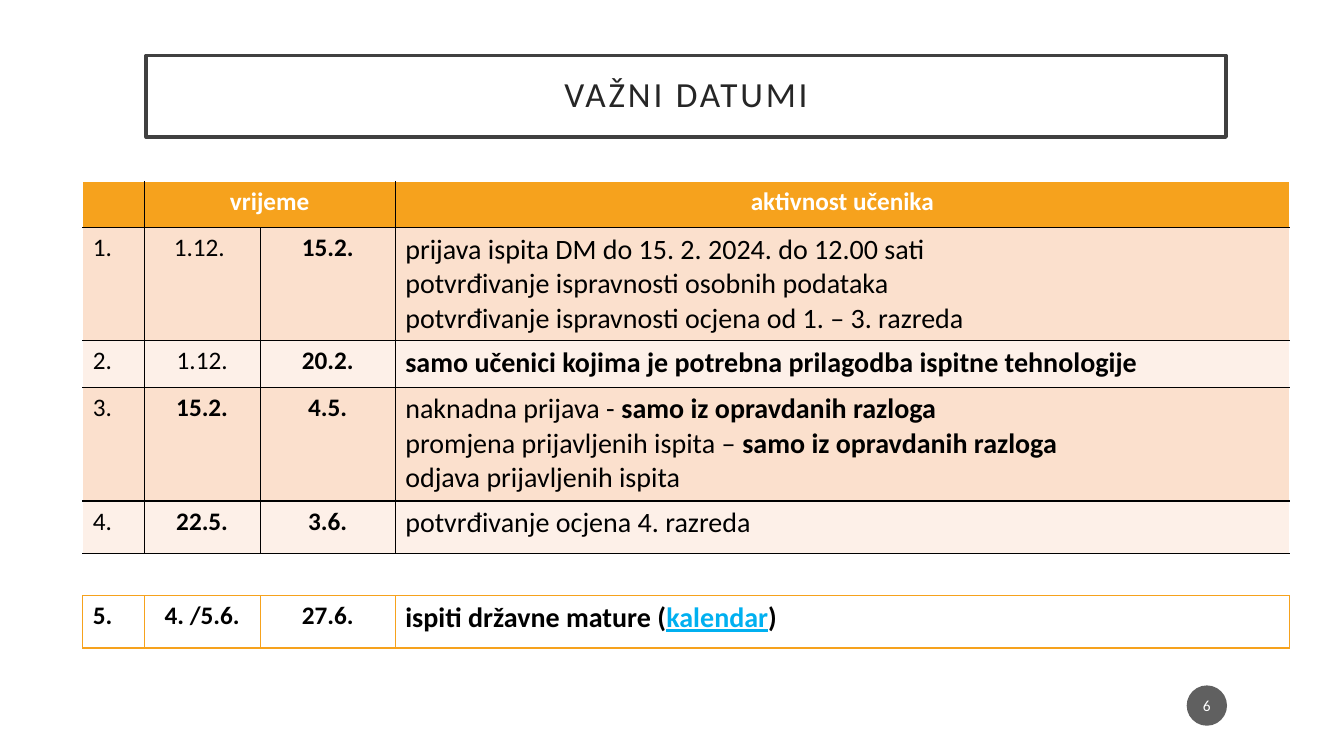
from lxml.etree import SubElement
from pptx import Presentation
from pptx.dml.color import RGBColor
from pptx.enum.shapes import MSO_SHAPE
from pptx.enum.text import MSO_ANCHOR, PP_ALIGN
from pptx.oxml import parse_xml
from pptx.oxml.ns import nsdecls, qn
from pptx.util import Inches, Pt

COLORS = {
    "white": "FFFFFF", "black": "000000", "title": "262626", "frame": "404040",
    "orange": "F6A21D", "peach": "FBE0CD", "cream": "FDF0E8",
    "link": "00B0F0", "badge": "1D1D1D",
}
FONT = "Calibri"
LEFT, WIDTH = 0.82, 11.98
COLUMNS = [0.61, 1.15, 1.34, 8.87]


def rgb(name):
    return RGBColor.from_string(COLORS[name])


def add_text(p, text, size=18, color="black", bold=False, underline=False, spacing=0):
    r = p.add_run()
    r.text = text
    r.font.name = FONT
    r.font.size = Pt(size)
    r.font.bold = bold
    r.font.underline = underline
    r.font.color.rgb = rgb(color)
    if spacing:
        r.font._element.set("spc", str(spacing * 100))


class SlideBuilder:
    def __init__(self, prs):
        self.s = prs.slides.add_slide(prs.slide_layouts[6])

    def shape(self, kind, box, text, fill, line=None, inset=(0.1, 0.05), alpha=None,
              line_spacing=None, **fmt):
        sp = self.s.shapes.add_shape(kind, *(Inches(v) for v in box))
        sp.shadow.inherit = False
        sp.fill.solid()
        sp.fill.fore_color.rgb = rgb(fill)
        if alpha:
            color = sp._element.spPr.find(qn("a:solidFill"))[0]
            SubElement(color, qn("a:alpha"), val=str(alpha * 1000))
        if line:
            sp.line.color.rgb = rgb(line)
            sp.line.width = Pt(2.5)
        else:
            sp.line.fill.background()
        tf = sp.text_frame
        tf.word_wrap = True
        tf.vertical_anchor = MSO_ANCHOR.MIDDLE
        tf.margin_left = tf.margin_right = Inches(inset[0])
        tf.margin_top = tf.margin_bottom = Inches(inset[1])
        p = tf.paragraphs[0]
        p.alignment = PP_ALIGN.CENTER
        p.line_spacing = line_spacing
        add_text(p, text, **fmt)

    def table(self, top, heights):
        frame = self.s.shapes.add_table(
            len(heights), len(COLUMNS), Inches(LEFT), Inches(top),
            Inches(WIDTH), Inches(sum(heights)))
        table = frame.table
        table.first_row = table.horz_banding = False
        for column, width in zip(table.columns, COLUMNS):
            column.width = Inches(width)
        for row, height in zip(table.rows, heights):
            row.height = Inches(height)
        return table

    def cell(self, cell, paragraphs, fill, borders, center=False):
        if fill:
            cell.fill.solid()
            cell.fill.fore_color.rgb = rgb(fill)
        else:
            cell.fill.background()
        for i, (side, (color, width)) in enumerate(zip("LRTB", borders)):
            cell._tc.get_or_add_tcPr().insert(i, parse_xml(
                f'<a:ln{side} {nsdecls("a")} w="{Pt(width)}"><a:solidFill>'
                f'<a:srgbClr val="{COLORS[color]}"/></a:solidFill></a:ln{side}>'))
        tf = cell.text_frame
        for i, runs in enumerate(paragraphs):
            p = tf.paragraphs[0] if i == 0 else tf.add_paragraph()
            p.alignment = PP_ALIGN.CENTER if center else PP_ALIGN.LEFT
            for text, fmt in runs:
                add_text(p, text, **fmt)


def run(text, **fmt):
    return text, fmt


def plain(text):
    return run(text, size=20)


def strong(text):
    return run(text, size=20, bold=True)


def heading(text):
    return [[run(text, color="white", bold=True)]] if text else []


# Each row: number, start, end, activity paragraphs
ACTIVITIES = [
    (run("1."), run("1.12. "), run("15.2.", bold=True), [
        [plain("prijava ispita DM do 15. 2. 2024. do 12.00 sati")],
        [plain("potvrđivanje ispravnosti osobnih podataka")],
        [plain("potvrđivanje ispravnosti ocjena od 1. – 3. razreda")]]),
    (run("2."), run("1.12."), run("20.2.", bold=True), [
        [strong("samo učenici kojima je potrebna prilagodba ispitne tehnologije")]]),
    (run("3."), run("15.2.", bold=True), run("4.5.", bold=True), [
        [plain("naknadna prijava - "), strong("samo iz opravdanih razloga")],
        [plain("promjena prijavljenih ispita – "), strong("samo iz opravdanih razloga")],
        [plain("odjava prijavljenih ispita")]]),
    (run("4."), run("22.5.", bold=True), run("3.6.", bold=True), [
        [plain("potvrđivanje ocjena 4. razreda")]]),
]
EXAMS = (run("5.", bold=True), run("4. /5.6.", bold=True), run("27.6.", bold=True), [
    [strong("ispiti državne mature ("),
     run("kalendar", size=20, color="link", bold=True, underline=True),
     strong(")")]])


def row_content(row):
    return [[[item]] for item in row[:3]] + [row[3]]


def main():
    prs = Presentation()
    prs.slide_width, prs.slide_height = Inches(13.33), Inches(7.5)
    slide = SlideBuilder(prs)

    # Title
    slide.shape(MSO_SHAPE.RECTANGLE, (1.45, 0.55, 10.71, 0.81), "VAŽNI DATUMI", "white",
                line="frame", inset=(0.2, 0.2), line_spacing=0.9,
                size=25.2, color="title", spacing=2)

    # Dates table
    dates = slide.table(1.8, [0.46, 1.08, 0.46, 1.13, 0.52])
    dates.cell(0, 1).merge(dates.cell(0, 2))
    header = [heading(t) for t in ("", "vrijeme", "", "aktivnost učenika")]
    rows = [header] + [row_content(row) for row in ACTIVITIES]
    last = len(COLUMNS) - 1
    for i, row in enumerate(rows):
        fill = "orange" if i == 0 else ("cream", "peach")[i % 2]
        for j, paragraphs in enumerate(row):
            edges = (j == 0, j == last, i == 0, False)
            borders = [("white" if edge else "black", 1) for edge in edges]
            slide.cell(dates.cell(i, j), paragraphs, fill, borders,
                       center=i == 0 or j in (1, 2))

    # Page number
    slide.shape(MSO_SHAPE.OVAL, (11.77, 6.8, 0.4, 0.4), "6", "badge", alpha=70,
                inset=(0.02, 0.05), size=11, color="white")

    # Exams table
    exams = slide.table(5.91, [0.52])
    borders = [("orange", 1)] * 3 + [("orange", 2)]
    for j, paragraphs in enumerate(row_content(EXAMS)):
        slide.cell(exams.cell(0, j), paragraphs, None, borders, center=j in (1, 2))

    prs.save("out.pptx")


if __name__ == "__main__":
    main()
